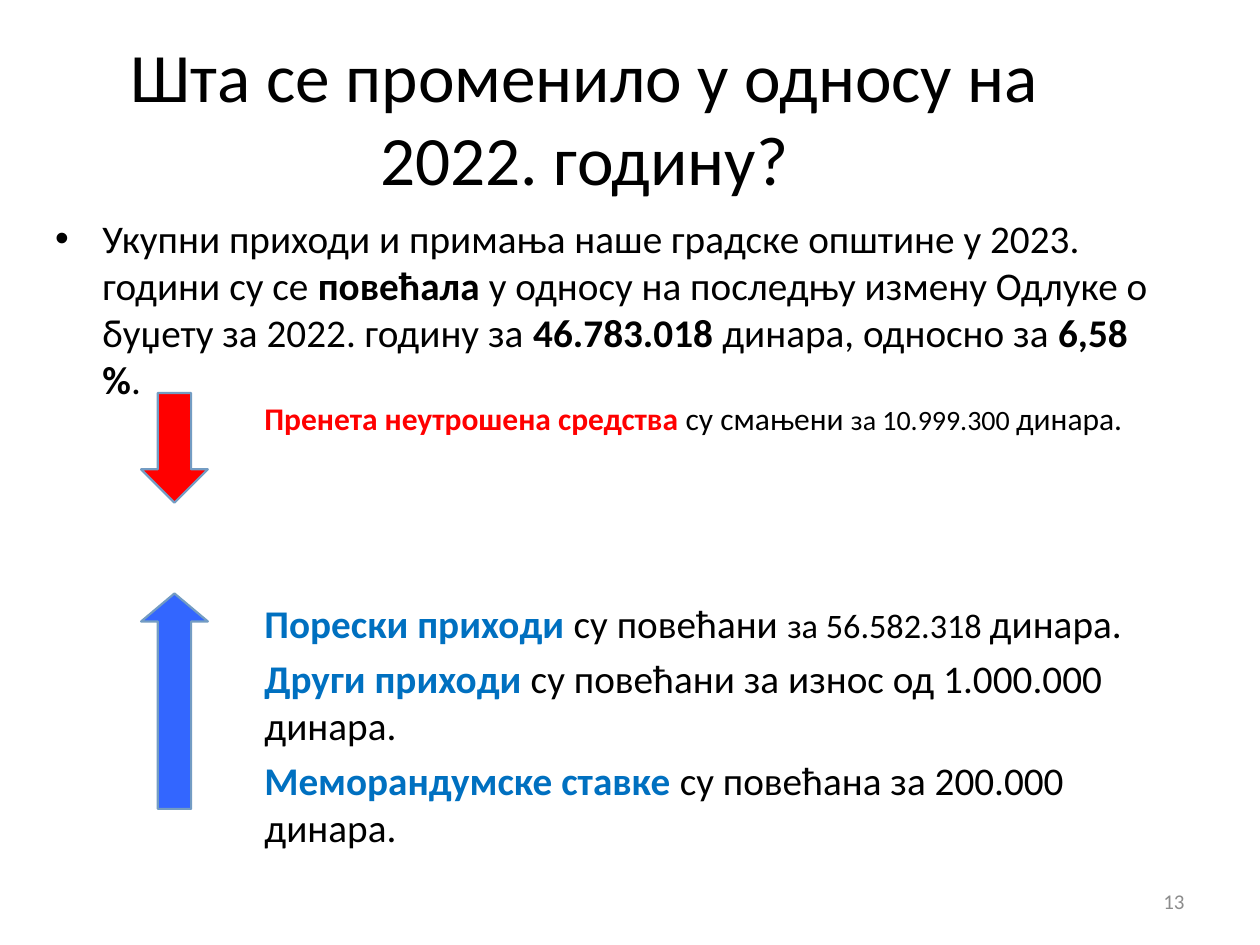
import pptx
import pptx.util
import pptx.dml.color
import pptx.enum.lang
import pptx.enum.shapes
import pptx.enum.text
import pptx.oxml
from pptx.oxml.ns import qn

Pt = pptx.util.Pt
ALIGN = pptx.enum.text.PP_ALIGN
ANCHOR = pptx.enum.text.MSO_ANCHOR
SHAPE = pptx.enum.shapes.MSO_SHAPE

FONT = "Calibri"
COLORS = {
    "black": "000000", "gray": "8C8C8C", "accent": "0070C0", "red": "FF0000",
    "blue": "3366FF", "outline": "739CC3",
}

# A run is (text, size, color, bold); a paragraph is a list of runs.
BODY = 22.4
TITLE = [[("Шта се променило у односу на 2022. годину?", 39.6, "black", False)]]
SUMMARY = [[
    ("Укупни приходи и примања наше градске општине у 2023. години су се ", BODY, "black", False),
    ("повећала ", BODY, "black", True),
    ("у односу на последњу измену Одлуке о буџету за 2022. годину за", BODY, "black", False),
    (" 46.783.018 ", BODY, "black", True),
    ("динара, односно за ", BODY, "black", False),
    ("6,58 %", BODY, "black", True),
    (".", BODY, "black", False),
]]
DECREASE = [[
    ("Пренета неутрошена средства ", 18, "red", True),
    ("су смањени ", 18, "black", False),
    ("за 10.999.300 ", 16, "black", False),
    ("динара.", 18, "black", False),
]]
INCREASES = [
    [("Порески приходи ", BODY, "accent", True),
     ("су повећани ", BODY, "black", False),
     ("за 56.582.318 ", 19.6, "black", False),
     ("динара.", BODY, "black", False)],
    [("Други приходи ", BODY, "accent", True),
     ("су повећани за износ од 1.000.000 динара.", BODY, "black", False)],
    [("Меморандумске ставке ", BODY, "accent", True),
     ("су повећана за 200.000 динара.", BODY, "black", False)],
]
PAGE_NUMBER = [[("13", 12, "gray", False)]]

BULLET_INDENT = 27
BODY_GAP = 4.5
ARROW_LEFT, ARROW_WIDTH = 80.64, 38.16
TEXT_LEFT = 144
DECREASE_TOP, INCREASE_TOP = 224.64, 339.12

# paragraphs, (left, top, width, height), alignment, anchor, space before, bulleted
TEXTS = [
    (TITLE, (20.16, 21.6, 627.84, 90), ALIGN.CENTER, ANCHOR.MIDDLE, 0, False),
    (SUMMARY, (24.48, 118.8, 648, 89.28), ALIGN.LEFT, ANCHOR.TOP, BODY_GAP, True),
    (INCREASES, (TEXT_LEFT, INCREASE_TOP, 539.28, 149.04), ALIGN.LEFT, ANCHOR.TOP, BODY_GAP, False),
    (PAGE_NUMBER, (516.24, 500.4, 167.76, 28.8), ALIGN.RIGHT, ANCHOR.MIDDLE, 0, False),
    (DECREASE, (TEXT_LEFT, DECREASE_TOP, 516.24, 51.12), ALIGN.LEFT, ANCHOR.TOP, 0, False),
]
# preset, top, height, head length relative to width, fill
ARROWS = [
    (SHAPE.DOWN_ARROW, DECREASE_TOP, 62.64, 0.5, "red"),
    (SHAPE.UP_ARROW, INCREASE_TOP, 123.12, 0.42, "blue"),
]


def color(name):
    return pptx.dml.color.RGBColor.from_string(COLORS[name])


def add_bullet(paragraph):
    properties = paragraph._p.get_or_add_pPr()
    properties.set("marL", str(Pt(BULLET_INDENT)))
    properties.set("indent", str(-Pt(BULLET_INDENT)))
    for tag, attribute, value in (("a:buFont", "typeface", "Arial"), ("a:buChar", "char", "•")):
        element = pptx.oxml.xmlchemy.OxmlElement(tag)
        element.set(attribute, value)
        properties.append(element)


def add_text(slide, paragraphs, box, alignment, anchor, space_before, bulleted):
    frame = slide.shapes.add_textbox(*map(Pt, box)).text_frame
    frame.word_wrap = True
    frame.vertical_anchor = anchor
    frame.text = "\n".join("".join(run[0] for run in runs) for runs in paragraphs)
    for paragraph, runs in zip(frame.paragraphs, paragraphs):
        paragraph.alignment = alignment
        paragraph.space_before = Pt(space_before)
        if bulleted:
            add_bullet(paragraph)
        paragraph.clear()
        for text, size, color_name, bold in runs:
            run = paragraph.add_run()
            run.text = text
            run.font.name = FONT
            run.font.size = Pt(size)
            run.font.bold = bold
            run.font.color.rgb = color(color_name)
            run.font.language_id = pptx.enum.lang.MSO_LANGUAGE_ID.SERBIAN_CYRILLIC


def add_arrow(slide, preset, top, height, head, fill):
    arrow = slide.shapes.add_shape(
        preset, Pt(ARROW_LEFT), Pt(top), Pt(ARROW_WIDTH), Pt(height))
    arrow.shadow.inherit = False
    arrow.adjustments[0] = 0.5
    arrow.adjustments[1] = head
    arrow.fill.solid()
    arrow.fill.fore_color.rgb = color(fill)
    arrow.line.color.rgb = color("outline")
    arrow.line.width = Pt(1.25)


def main():
    presentation = pptx.Presentation()
    presentation.slide_width, presentation.slide_height = Pt(720), Pt(540)
    slide = presentation.slides.add_slide(presentation.slide_layouts[6])
    for text in TEXTS:
        add_text(slide, *text)
    for arrow in ARROWS:
        add_arrow(slide, *arrow)
    presentation.save("out.pptx")


if __name__ == "__main__":
    main()
